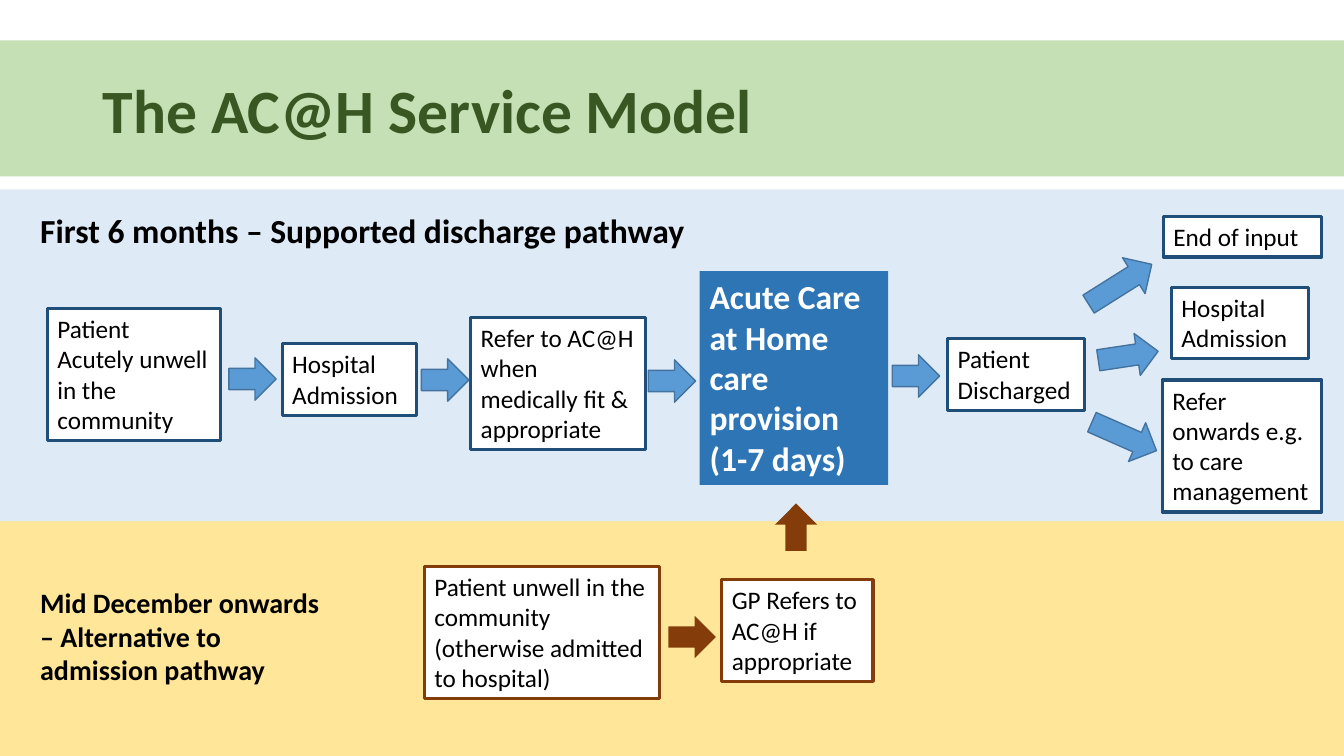
"""Build the AC@H service model slide with its two care pathways."""
from pptx import Presentation
from pptx.dml.color import RGBColor
from pptx.enum.shapes import MSO_SHAPE
from pptx.enum.text import MSO_ANCHOR, MSO_AUTO_SIZE, PP_ALIGN
from pptx.util import Emu, Pt

RECTANGLE = MSO_SHAPE.RECTANGLE
RIGHT_ARROW = MSO_SHAPE.RIGHT_ARROW
LEFT = PP_ALIGN.LEFT
TOP, MIDDLE = MSO_ANCHOR.TOP, MSO_ANCHOR.MIDDLE
NO_AUTOFIT = MSO_AUTO_SIZE.NONE

EMU_PER_PX = 9144
SLIDE_WIDTH, SLIDE_HEIGHT = 1333, 750
TITLE_LAYOUT = 5
FONT = "Calibri"

BLACK = RGBColor(0x00, 0x00, 0x00)
WHITE = RGBColor(0xFF, 0xFF, 0xFF)
DARK_GREEN = RGBColor(0x38, 0x57, 0x23)
PALE_GREEN = RGBColor(0xC5, 0xE0, 0xB4)
PALE_BLUE = RGBColor(0xDE, 0xEB, 0xF7)
PALE_YELLOW = RGBColor(0xFF, 0xE6, 0x99)
NAVY = RGBColor(0x1F, 0x4E, 0x79)
STRONG_BLUE = RGBColor(0x2E, 0x75, 0xB6)
ARROW_BLUE = RGBColor(0x5B, 0x9B, 0xD5)
ARROW_EDGE = RGBColor(0x43, 0x73, 0x9E)
BROWN = RGBColor(0x84, 0x3C, 0x0B)

TITLE = ("The AC@H Service Model", (92, 40, 1150, 145), 44)

BANDS = [
    (516, 234, PALE_YELLOW),
    (188, 329, PALE_BLUE),
    (40, 135, PALE_GREEN),
]

HEADINGS = [
    ("First 6 months – Supported discharge pathway", (30, 203, 665, 50), 24),
    ("Mid December onwards – Alternative to admission pathway", (30, 576, 305, 111), 20),
]

STEPS = [
    ("Patient Acutely unwell in the community", (47, 306, 172, 131), NAVY),
    ("Hospital\nAdmission", (280, 341, 133, 71), NAVY),
    ("Refer to AC@H when medically fit & appropriate", (467, 315, 173, 131), NAVY),
    ("Patient Discharged", (940, 336, 136, 71), NAVY),
    ("End of input", (1154, 215, 157, 40), NAVY),
    ("Hospital Admission", (1162, 285, 136, 71), NAVY),
    ("Refer onwards e.g. to care management", (1153, 377, 158, 131), NAVY),
    ("Patient unwell in the community\n(otherwise admitted to hospital)", (421, 562, 233, 131), BROWN),
    ("GP Refers to AC@H if appropriate", (716, 575, 150, 101), BROWN),
]

CARE_PROVISION = ("Acute Care at Home care provision\n(1-7 days)", (694, 269, 187, 212))

ARROW_HEIGHT = 42
DISCHARGE_ARROWS = [
    (227, 355, 47, 0),
    (418, 356, 47, 0),
    (643, 357, 47, 0),
    (885, 352, 47, 0),
    (1074, 261, 74, 327.8),
    (1089, 332, 60, 351.5),
    (1080, 412, 70, 23.8),
]
ALTERNATIVE_ARROWS = [(663, 611, 47, 0), (766, 502, 47, 270)]


def scaled(box):
    return [Emu(length * EMU_PER_PX) for length in box]


def write(shape, text, size, color, bold=False, anchor=TOP):
    frame = shape.text_frame
    frame.text = text
    frame.word_wrap = True
    frame.auto_size = NO_AUTOFIT
    frame.vertical_anchor = anchor
    for paragraph in frame.paragraphs:
        paragraph.alignment = LEFT
        for run in paragraph.runs:
            run.font.name = FONT
            run.font.size = Pt(size)
            run.font.bold = bold
            run.font.color.rgb = color


def add_filled(slide, kind, box, fill, edge=None, edge_width=1):
    shape = slide.shapes.add_shape(kind, *scaled(box))
    shape.shadow.inherit = False
    shape.fill.solid()
    shape.fill.fore_color.rgb = fill
    if edge is None:
        shape.line.fill.background()
    else:
        shape.line.color.rgb = edge
        shape.line.width = Pt(edge_width)
    return shape


def add_title(slide):
    text, box, size = TITLE
    title = slide.shapes.title
    title.left, title.top, title.width, title.height = scaled(box)
    write(title, text, size, DARK_GREEN, bold=True, anchor=MIDDLE)
    title.text_frame.paragraphs[0].line_spacing = 0.9
    slide.shapes._spTree.append(title._element)


def add_arrows(slide, arrows, fill, edge=None):
    for left, top, width, rotation in arrows:
        box = (left, top, width, ARROW_HEIGHT)
        add_filled(slide, RIGHT_ARROW, box, fill, edge).rotation = rotation


def main():
    presentation = Presentation()
    presentation.slide_width, presentation.slide_height = scaled((SLIDE_WIDTH, SLIDE_HEIGHT))
    slide = presentation.slides.add_slide(presentation.slide_layouts[TITLE_LAYOUT])

    for top, height, fill in BANDS:
        add_filled(slide, RECTANGLE, (0, top, SLIDE_WIDTH, height), fill)
    add_title(slide)
    for text, box, size in HEADINGS:
        write(slide.shapes.add_textbox(*scaled(box)), text, size, BLACK, bold=True)
    for text, box, edge in STEPS:
        step = add_filled(slide, RECTANGLE, box, WHITE, edge, 2.25)
        write(step, text, 18, BLACK)
    text, box = CARE_PROVISION
    write(add_filled(slide, RECTANGLE, box, STRONG_BLUE), text, 24, WHITE, bold=True)
    add_arrows(slide, DISCHARGE_ARROWS, ARROW_BLUE, ARROW_EDGE)
    add_arrows(slide, ALTERNATIVE_ARROWS, BROWN)

    presentation.save("out.pptx")


if __name__ == "__main__":
    main()
